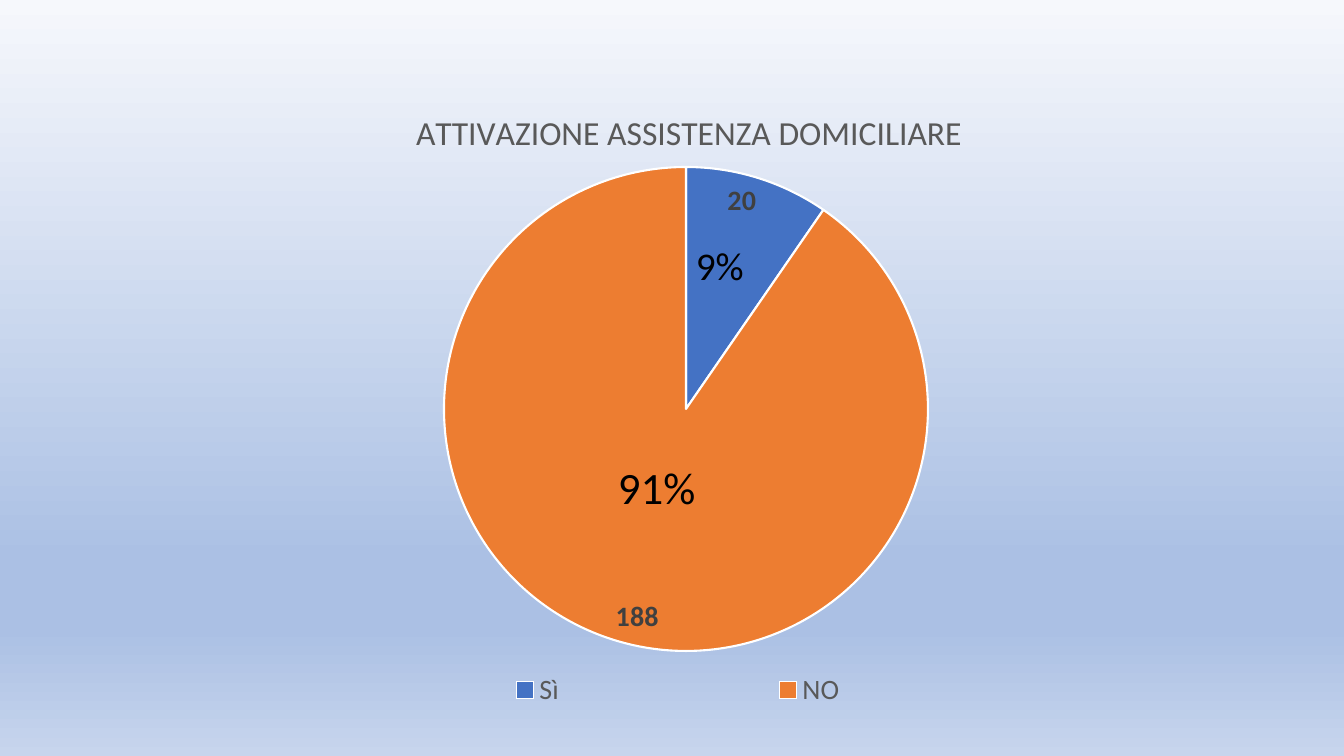
from lxml.etree import SubElement
from pptx import Presentation
from pptx.chart.data import CategoryChartData
from pptx.dml.color import RGBColor
from pptx.enum.chart import XL_CHART_TYPE, XL_LABEL_POSITION, XL_LEGEND_POSITION
from pptx.oxml import parse_xml
from pptx.oxml.ns import nsdecls, qn
from pptx.util import Emu, Pt

THEME = {
    "font": "Calibri",
    "sky": [(0, "F6F8FC"), (74, "ABC0E4"), (83, "ABC0E4"), (100, "C7D5ED")],
    "slices": ["4472C4", "ED7D31"],
    "edge": "FFFFFF", "ink": "000000", "grey": "595959", "dark": "404040",
    "title": 24, "label": 20, "legend": 20,
}
PX = 12192000 // 1344 + 3 / 7  # EMU in one px
CHART = (59, 74, 1254, 645)


def style(font, size, color, bold=False):
    font.name, font.size, font.bold = THEME["font"], Pt(size), bold
    font.color.rgb = RGBColor.from_string(color)


def place(part, index, left, top, width=None, height=None):
    """Fix a chart part at a slide position given in px."""
    for old in part.findall(qn("c:layout")):
        part.remove(old)
    layout = parse_xml(f"<c:layout {nsdecls('c')}><c:manualLayout/></c:layout>")
    manual = layout[0]
    if part.tag == qn("c:plotArea"):
        SubElement(manual, qn("c:layoutTarget")).set("val", "inner")
    for axis in "xy":
        SubElement(manual, qn(f"c:{axis}Mode")).set("val", "edge")
    x, y, w, h = CHART
    shares = {"x": (left - x) / w, "y": (top - y) / h}
    if width:
        shares |= {"w": width / w, "h": height / h}
    for key, share in shares.items():
        SubElement(manual, qn(f"c:{key}")).set("val", f"{share:.4f}")
    part.insert(index, layout)


deck = Presentation()
deck.slide_width, deck.slide_height = Emu(round(1344 * PX)), Emu(round(756 * PX))
slide = deck.slides.add_slide(deck.slide_layouts[6])

# Background gradient, top to bottom
fill = slide.background.fill
fill.gradient()
fill.gradient_angle = 270
stops = slide.background._cSld.find(".//" + qn("a:gsLst"))
for stop in list(stops):
    stops.remove(stop)
for pos, color in THEME["sky"]:
    stop = SubElement(stops, qn("a:gs"), pos=str(pos * 1000))
    SubElement(stop, qn("a:srgbClr"), val=color)

# Pie chart
data = CategoryChartData()
data.categories = ["Sì", "NO"]
data.add_series("Series 1", [20, 188])
box = [Emu(round(n * PX)) for n in CHART]
chart = slide.shapes.add_chart(XL_CHART_TYPE.PIE, *box, data).chart
style(chart.font, 10, THEME["ink"])
plot = chart.plots[0]
plot.vary_by_categories = True
for i, color in enumerate(THEME["slices"]):
    form = plot.series[0].points[i].format
    form.fill.solid()
    form.fill.fore_color.rgb = RGBColor.from_string(color)
    form.line.color.rgb = RGBColor.from_string(THEME["edge"])
    form.line.width = Pt(1.5)

# Value labels
plot.has_data_labels = True
labels = plot.data_labels
labels.show_value, labels.show_percentage = True, False
labels.position = XL_LABEL_POSITION.INSIDE_END
style(labels.font, THEME["label"], THEME["dark"], True)

# Chart title and legend
chart.has_title = True
title = chart.chart_title
title.text_frame.text = "ATTIVAZIONE ASSISTENZA DOMICILIARE"
style(title.text_frame.paragraphs[0].runs[0].font, THEME["title"], THEME["grey"])
chart.has_legend = True
legend = chart.legend
legend.position = XL_LEGEND_POSITION.BOTTOM
legend.include_in_layout = False
style(legend.font, THEME["legend"], THEME["grey"])

# Places of the chart parts
place(title._element, 1, 410, 104)
place(legend._element, 1, 305, 672, 746, 36)
place(chart._chartSpace.chart.plotArea, 0, 444, 167, 484, 484)

# Percentages over the slices
for text, size, *spot in [("91%", 32, 608, 455, 213, 65),
                          ("9%", 28, 686, 236, 156, 57)]:
    note = slide.shapes.add_textbox(*[Emu(round(n * PX)) for n in spot])
    note.text_frame.word_wrap = True
    note.text_frame.text = text
    style(note.text_frame.paragraphs[0].runs[0].font, size, THEME["ink"])

deck.save("out.pptx")
